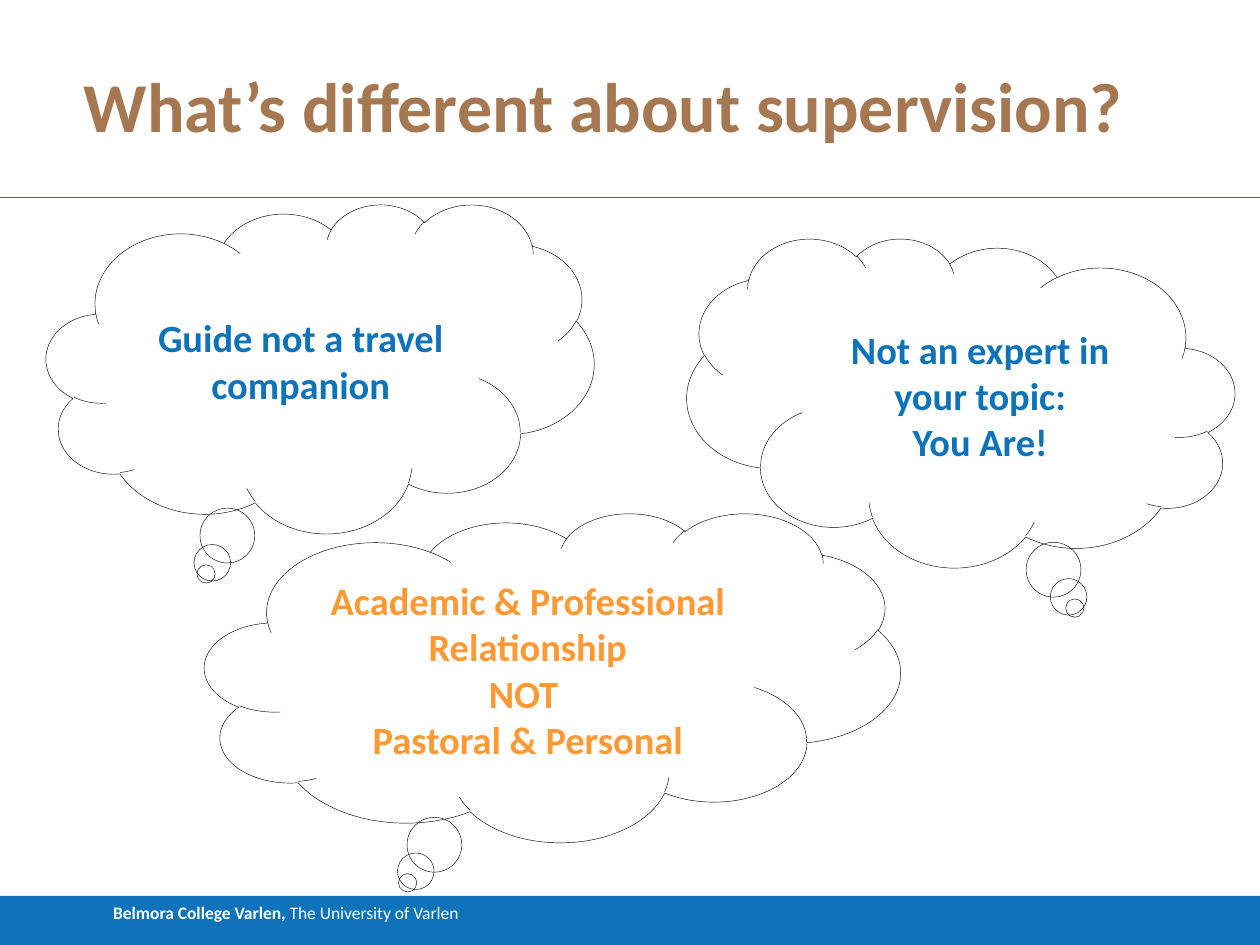
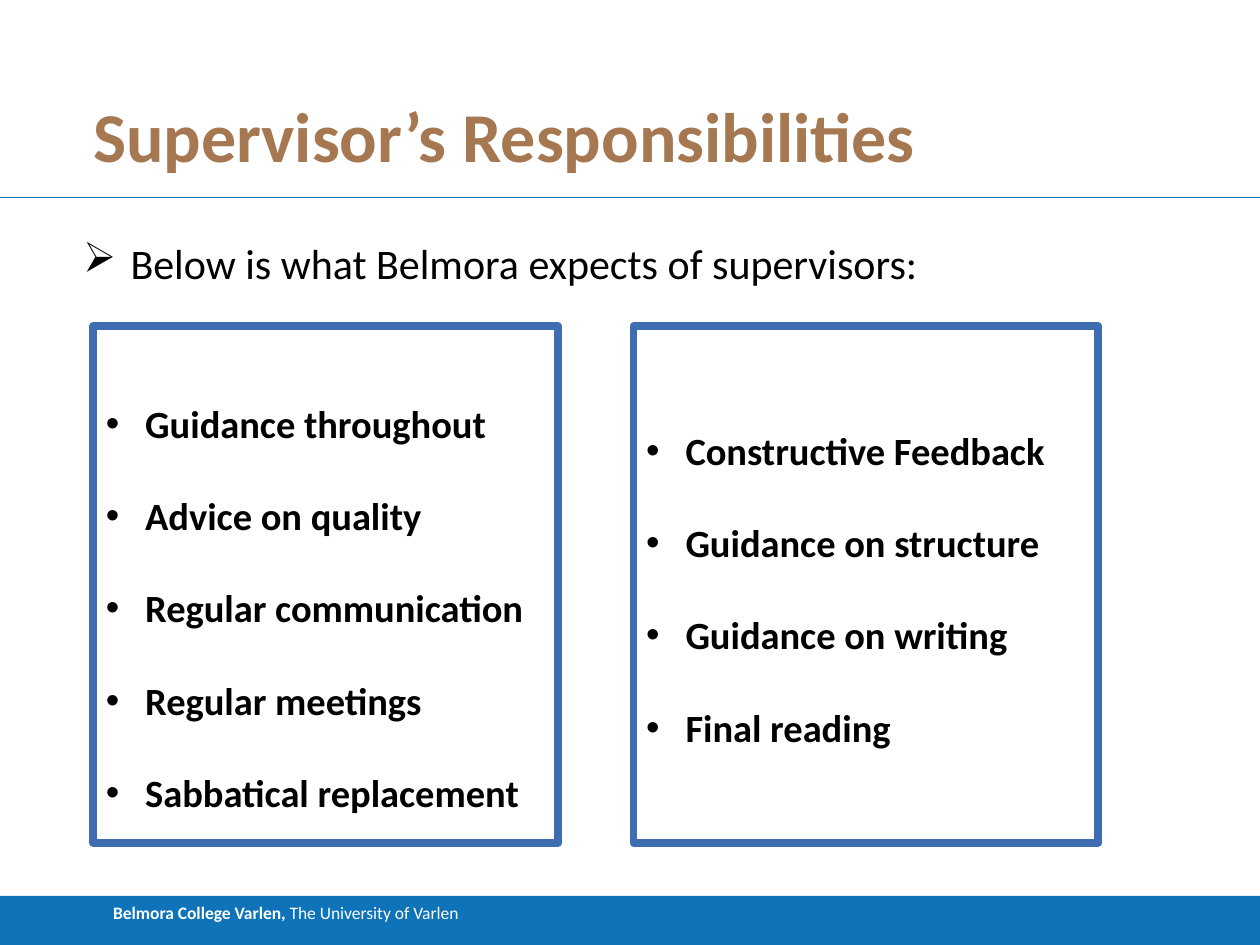
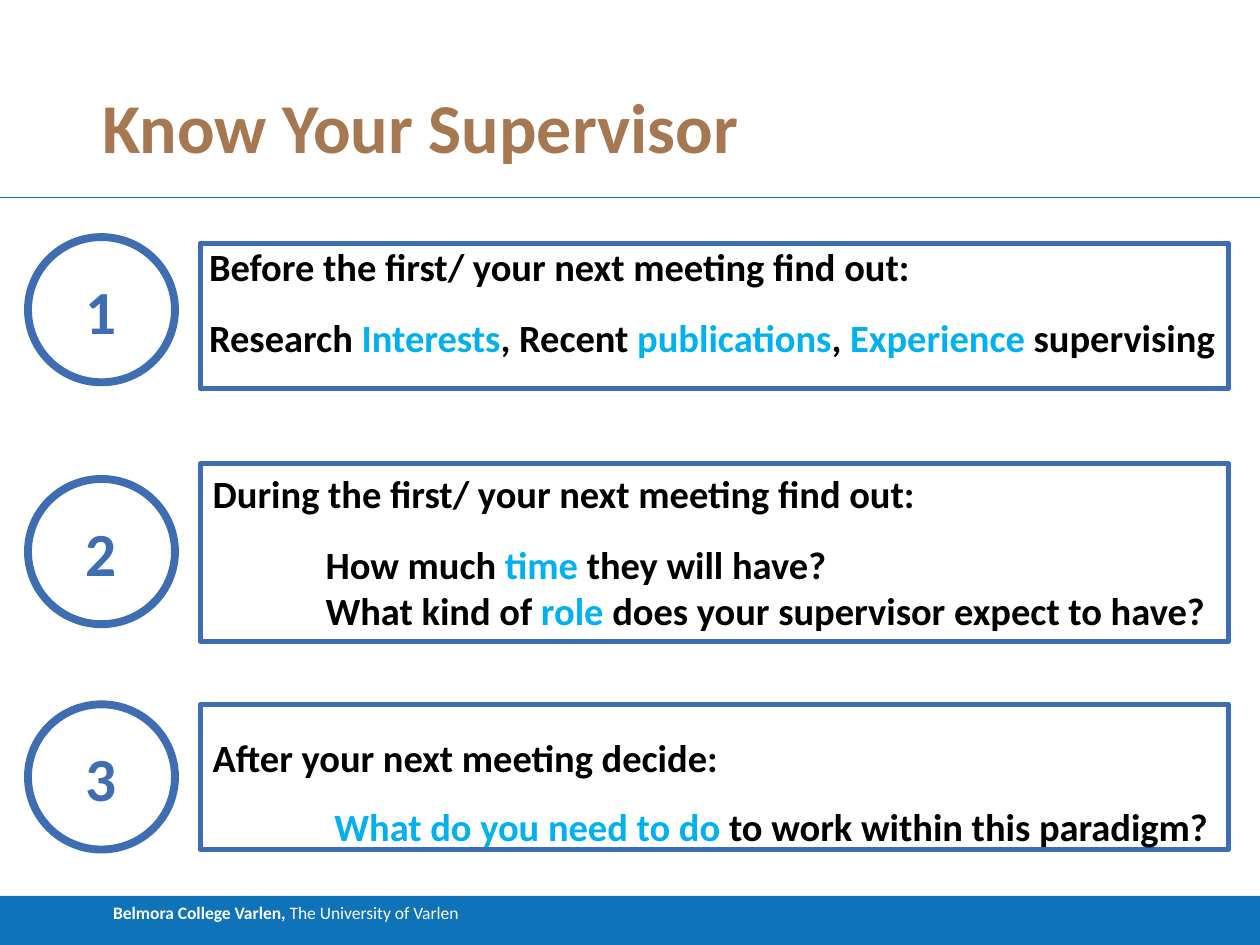
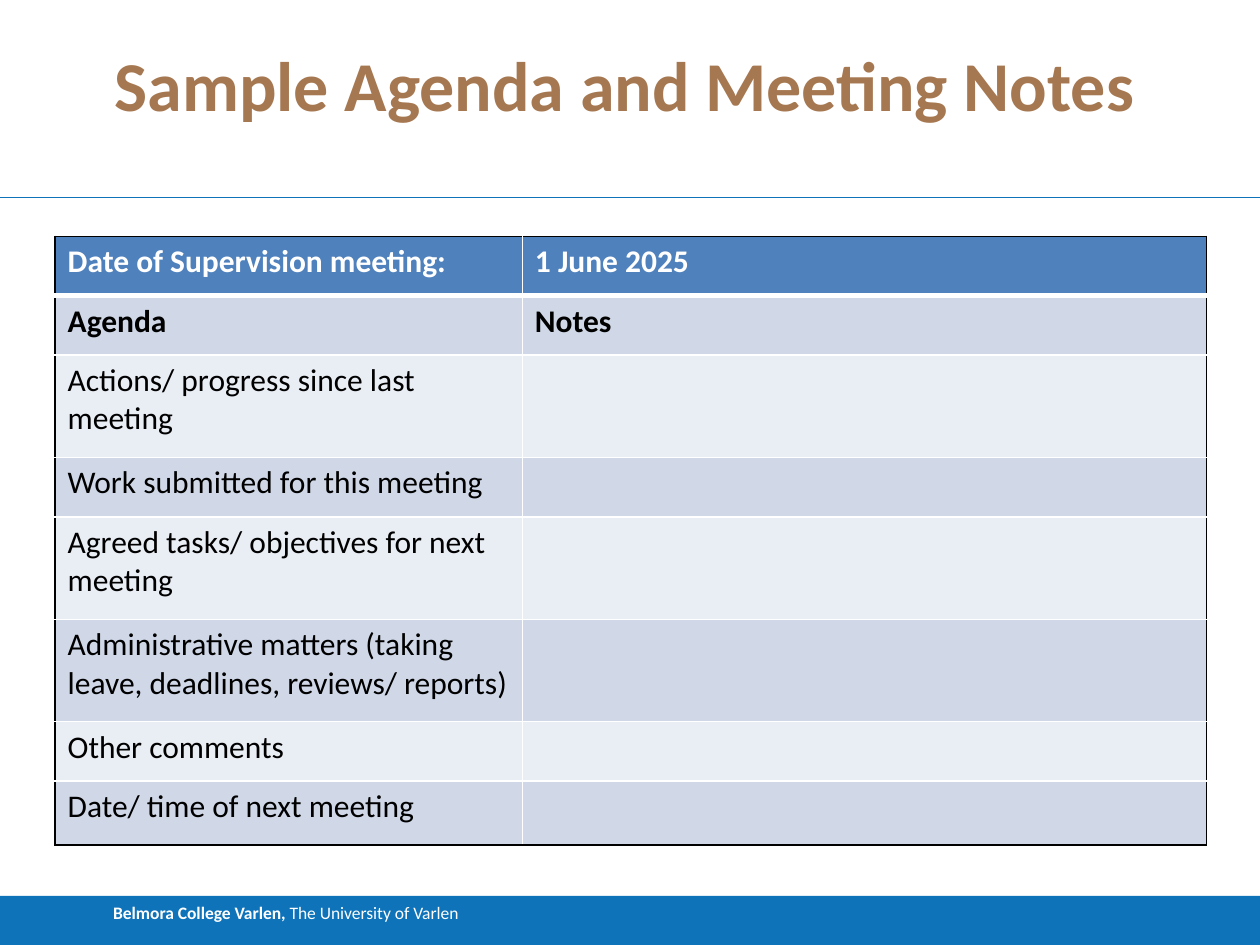
from lxml.etree import SubElement
from pptx import Presentation
from pptx.dml.color import RGBColor
from pptx.enum.shapes import MSO_CONNECTOR, MSO_SHAPE
from pptx.enum.text import MSO_ANCHOR, MSO_AUTO_SIZE, PP_ALIGN
from pptx.oxml.ns import qn
from pptx.util import Pt

FONT = "Calibri"
W, H = 720, 540
BLUE, BROWN, ORANGE = "0E73B9", "A67851", "FF9933"
FRAME, CYAN = "3E6DB2", "00B0F0"
BLACK, WHITE = "000000", "FFFFFF"
HEAD, BANDS = "4F81BD", ("E9EDF4", "D0D8E8")
TITLE_ONLY, TITLE_BODY, TWO_BODIES = 5, 1, 3


def rgb(color):
    return RGBColor.from_string(color)


def pts(box):
    return [Pt(v) for v in box]


def place(sp, box):
    sp.left, sp.top, sp.width, sp.height = pts(box)


def paint(sp, fill=None, line=None, width=1):
    if fill:
        sp.fill.solid()
        sp.fill.fore_color.rgb = rgb(fill)
    else:
        sp.fill.background()
    if line:
        sp.line.color.rgb = rgb(line)
        sp.line.width = Pt(width)
    else:
        sp.line.fill.background()


def frame(sp, anchor=MSO_ANCHOR.TOP, margins=(7.2, 3.6, 7.2, 3.6)):
    tf = sp.text_frame
    tf.word_wrap = True
    tf.auto_size = MSO_AUTO_SIZE.NONE
    tf.vertical_anchor = anchor
    tf.margin_left, tf.margin_top, tf.margin_right, tf.margin_bottom = pts(margins)
    return tf


def add_run(p, text, size, color, bold):
    r = p.add_run()
    r.text = text
    r.font.name = FONT
    r.font.size = Pt(size)
    r.font.bold = bold
    r.font.color.rgb = rgb(color)


def add_para(tf, runs, size=22, color=BLACK, bold=True, align=PP_ALIGN.LEFT,
             left=0, bullet=None, before=0, spacing=1.0):
    first = tf.paragraphs[0]
    p = tf.add_paragraph() if first.runs else first
    p.alignment = align
    p.space_before = Pt(before)
    p.line_spacing = spacing
    pPr = p._p.get_or_add_pPr()
    pPr.set("marL", str(Pt(left)))
    pPr.set("indent", str(Pt(-left if bullet else 0)))
    if bullet:
        SubElement(pPr, qn("a:buChar")).set("char", bullet)
    else:
        SubElement(pPr, qn("a:buNone"))
    for text, run_color in [(runs, color)] if isinstance(runs, str) else runs:
        add_run(p, text, size, run_color, bold)
    return p


def add_shape(s, kind, box, **look):
    sp = s.shapes.add_shape(kind, *pts(box))
    sp.shadow.inherit = False
    paint(sp, **look)
    return sp


def brand_master(prs, s):
    band = add_shape(s, MSO_SHAPE.RECTANGLE, (0, 512, W, 28), fill=BLUE)
    p = add_para(frame(band), "Belmora College Varlen, ", 10, WHITE, left=57.6)
    add_run(p, "The University of Varlen", 10, WHITE, False)
    rule = s.shapes.add_connector(MSO_CONNECTOR.STRAIGHT, *pts((0, 113, W, 113)))
    rule.line.color.rgb = rgb(BLUE)
    rule.line.width = Pt(0.75)
    SubElement(rule.element.spPr, qn("a:effectLst"))
    tree = prs.slide_master.element.cSld.spTree
    for number, sp in enumerate((band, rule), 101):
        sp.element.xpath(".//p:cNvPr")[0].set("id", str(number))
        tree.append(sp.element)


def add_slide(prs, layout, title, box, indent=0):
    s = prs.slides.add_slide(prs.slide_layouts[layout])
    sp = s.shapes.title
    place(sp, box)
    tf = frame(sp, MSO_ANCHOR.BOTTOM, (indent, 0, 0, 0))
    add_para(tf, title, 40, BROWN)
    return s


def add_cloud(s, box, lines, color, flip=False):
    sp = add_shape(s, MSO_SHAPE.CLOUD_CALLOUT, box, line=BLACK, width=0.25)
    if flip:
        sp.element.spPr.xfrm.set("flipH", "1")
    tf = frame(sp, MSO_ANCHOR.MIDDLE)
    for line in lines:
        add_para(tf, line, color=color, align=PP_ALIGN.CENTER)


def fill_list(sp, box, items, bottom):
    place(sp, box)
    paint(sp, WHITE, FRAME, 4.5)
    tf = frame(sp, MSO_ANCHOR.MIDDLE, (7.2, 3.6, 7.2, bottom))
    for item in items:
        add_para(tf, item, left=22.5, bullet="•", spacing=2.0)


def add_number(s, box, number):
    sp = add_shape(s, MSO_SHAPE.FLOWCHART_CONNECTOR, box,
                   fill=WHITE, line=FRAME, width=4.5)
    add_para(frame(sp, MSO_ANCHOR.MIDDLE), str(number), 35, FRAME,
             align=PP_ALIGN.CENTER)


def fill_step(sp, box, paras, **frame_options):
    place(sp, box)
    paint(sp, line=FRAME, width=3)
    tf = frame(sp, **frame_options)
    for runs, options in paras:
        add_para(tf, runs, **options)


def set_border(cell, side, color, width):
    ln = SubElement(cell._tc.get_or_add_tcPr(), qn("a:ln" + side), w=str(Pt(width)))
    fill = SubElement(ln, qn("a:solidFill"))
    SubElement(fill, qn("a:srgbClr"), val=color)


def add_agenda(s, box, widths, heights, rows):
    table = s.shapes.add_table(len(rows), len(widths), *pts(box)).table
    for col, width in zip(table.columns, widths):
        col.width = Pt(width)
    last_row, last_col = len(rows) - 1, len(widths) - 1
    for i, (texts, height) in enumerate(zip(rows, heights)):
        table.rows[i].height = Pt(height)
        for j, text in enumerate(texts):
            cell = table.cell(i, j)
            outer = {"L": j == 0, "R": j == last_col,
                     "T": i == 0, "B": i == last_row}
            for side, edge in outer.items():
                under_head = (i, side) in ((0, "B"), (1, "T"))
                set_border(cell, side, BLACK if edge else WHITE,
                           3 if under_head else 1)
            cell.fill.solid()
            cell.fill.fore_color.rgb = rgb(BANDS[i % 2] if i else HEAD)
            if text:
                add_run(cell.text_frame.paragraphs[0], text, 18,
                        BLACK if i else WHITE, i < 2)


def difference_slide(prs):
    s = add_slide(prs, TITLE_ONLY, "What’s different about supervision?",
                  (48, 39.5, 641, 44))
    brand_master(prs, s)
    add_cloud(s, (26.5, 116.5, 313, 188), ["Guide not a travel companion"], BLUE)
    add_cloud(s, (117, 293, 397.5, 188),
              ["Academic & Professional Relationship", "NOT ",
               "Pastoral & Personal"], ORANGE)
    add_cloud(s, (392.5, 136, 313, 188),
              ["Not an expert in your topic:", "You Are!"], BLUE, flip=True)


def responsibilities_slide(prs):
    s = add_slide(prs, TWO_BODIES, "Supervisor’s Responsibilities",
                  (53.3, 11, 648, 90))
    left, right = s.placeholders[1], s.placeholders[2]
    fill_list(left, (53.3, 186.5, 265.7, 295),
              ["Guidance throughout", "Advice on quality",
               "Regular communication", "Regular meetings",
               "Sabbatical replacement"], 3.6)
    fill_list(right, (362, 186.5, 265.7, 295),
              ["Constructive Feedback", "Guidance on structure",
               "Guidance on writing", "Final reading"], 25.6)
    intro = s.shapes.add_textbox(*pts((40.5, 132, 581, 36)))
    add_para(frame(intro), "Below is what Belmora expects of supervisors:", 24,
             bold=False, left=27, bullet="➢")


def know_slide(prs):
    s = add_slide(prs, TITLE_BODY, "Know Your Supervisor", (40.3, 0, 648, 96), 18)
    x, width = 114.5, 587.5
    gap = {"before": 14.2}
    fill_step(s.placeholders[1], (x, 139, width, 83), [
        ("Before the first/ your next meeting find out:", gap),
        ([("Research ", BLACK), ("Interests", CYAN), (", Recent ", BLACK),
          ("publications", CYAN), (", ", BLACK), ("Experience", CYAN),
          (" supervising", BLACK)], gap),
    ], margins=(5, 0, 0, 0))
    during = [
        ("During the first/ your next meeting find out:", gap),
        ([("How much ", BLACK), ("time", CYAN), (" they will have?", BLACK)],
         {"before": 14.2, "left": 64.5}),
        ([("What kind of ", BLACK), ("role", CYAN),
          (" does your supervisor expect to have?", BLACK)], {"left": 64.5}),
    ]
    after = [
        ("After your next meeting decide:", {"before": 14.2, "spacing": 1.5}),
        ([("What do you need to do ", CYAN),
          ("to work within this paradigm?", BLACK)],
         {"left": 69.5, "spacing": 1.5}),
    ]
    for top, height, paras in ((265, 101.5, during), (402.5, 83, after)):
        box = (x, top, width, height)
        fill_step(s.shapes.add_textbox(*pts(box)), box, paras)
    for number, top in enumerate((135.5, 273.7, 402.5), 1):
        add_number(s, (16, top, 84, 83), number)


def agenda_slide(prs):
    s = add_slide(prs, TITLE_ONLY, "Sample Agenda and Meeting Notes",
                  (65.5, 28, 590, 44))
    add_agenda(s, (31.5, 135, 658, 348), (267, 391),
               (34, 34, 58.5, 34, 58.5, 58.5, 34, 36.5), [
                   ("Date of Supervision meeting:", "1 June 2025"),
                   ("Agenda", "Notes"),
                   ("Actions/ progress since last meeting", ""),
                   ("Work submitted for this meeting", ""),
                   ("Agreed tasks/ objectives for next meeting", ""),
                   ("Administrative matters (taking leave, deadlines, "
                    "reviews/ reports)", ""),
                   ("Other comments", ""),
                   ("Date/ time of next meeting", "")])


def main():
    prs = Presentation()
    prs.slide_width, prs.slide_height = Pt(W), Pt(H)
    difference_slide(prs)
    responsibilities_slide(prs)
    know_slide(prs)
    agenda_slide(prs)
    prs.save("out.pptx")


if __name__ == "__main__":
    main()
